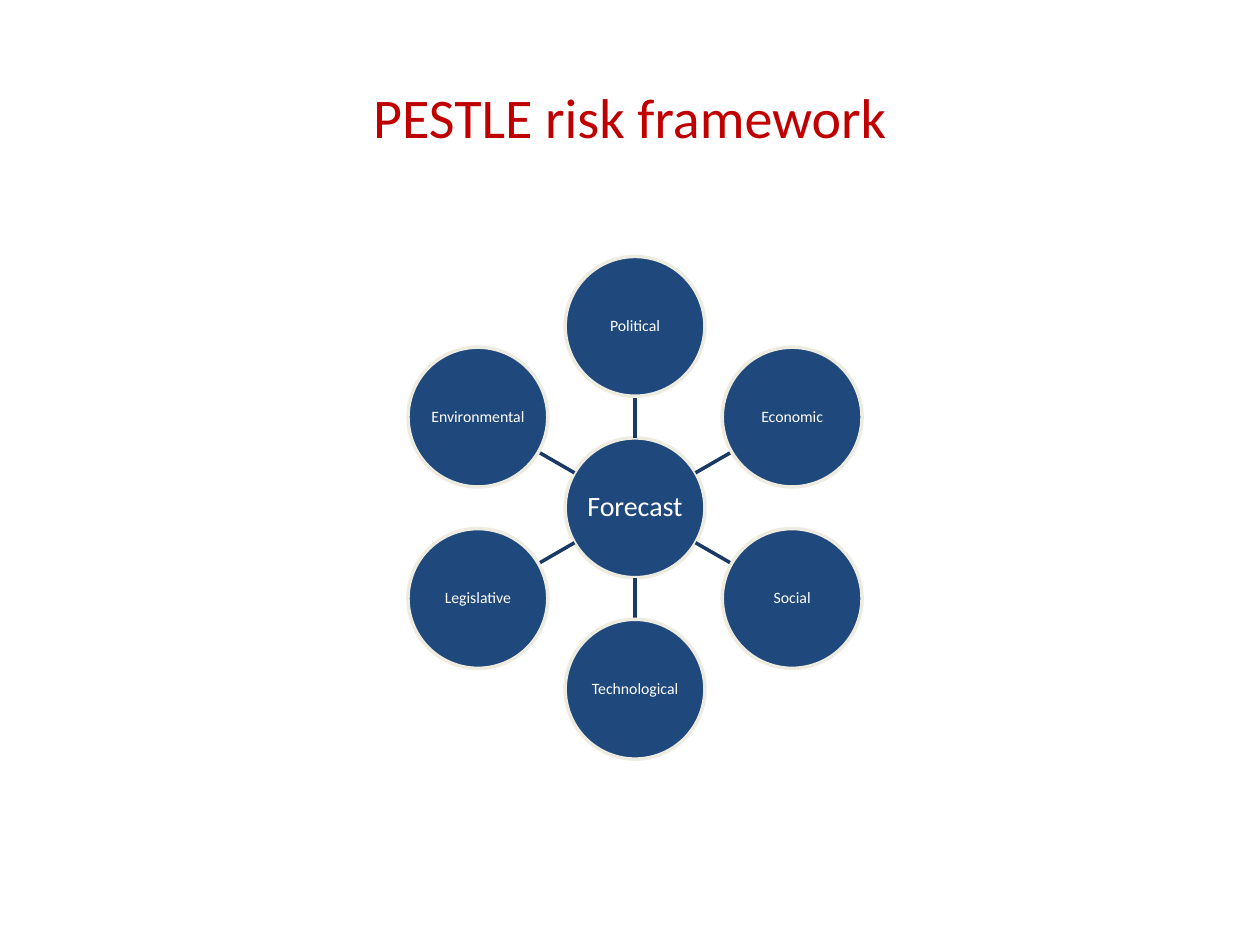
from math import cos, radians, sin

from lxml.etree import SubElement
from pptx import Presentation
from pptx.dml.color import RGBColor
from pptx.enum.shapes import MSO_CONNECTOR as Connector, MSO_SHAPE as Shape
from pptx.enum.text import MSO_ANCHOR as Anchor, PP_ALIGN as Align
from pptx.oxml.ns import qn
from pptx.util import Inches, Pt

NAVY = RGBColor(0x1F, 0x49, 0x7D)
DARK_NAVY = RGBColor(0x19, 0x3A, 0x64)
CREAM = RGBColor(0xEE, 0xEC, 0xE1)
RED = RGBColor(0xC0, 0x00, 0x00)
WHITE = RGBColor(0xFF, 0xFF, 0xFF)

CENTER_X, CENTER_Y = 5.04, 4.03
DIAMETER = 1.11
ORBIT = 1.44
FACTORS = ["Political", "Economic", "Social", "Technological", "Legislative", "Environmental"]


def write_text(shape, text, size, color, wrap=True, inset=0.1, line_spacing=1.0):
    frame = shape.text_frame
    frame.word_wrap = wrap
    frame.vertical_anchor = Anchor.MIDDLE
    frame.margin_left = frame.margin_right = Inches(inset)
    frame.margin_top = frame.margin_bottom = Inches(min(inset, 0.05))
    paragraph = frame.paragraphs[0]
    paragraph.alignment = Align.CENTER
    paragraph.line_spacing = line_spacing
    run = paragraph.add_run()
    run.text = text
    run.font.name = "Calibri"
    run.font.size = Pt(size)
    run.font.color.rgb = color


def add_title(slide, text):
    box = slide.shapes.add_textbox(Inches(0.5), Inches(0.3), Inches(9), Inches(1.25))
    write_text(box, text, size=32, color=RED)


def point_at(angle, distance):
    """Return the point at a clockwise angle from the top of the hub's centre."""
    turn = radians(angle)
    return CENTER_X + distance * sin(turn), CENTER_Y - distance * cos(turn)


def add_circle(slide, text, x, y, size):
    circle = slide.shapes.add_shape(
        Shape.OVAL, Inches(x - DIAMETER / 2), Inches(y - DIAMETER / 2),
        Inches(DIAMETER), Inches(DIAMETER))
    circle.shadow.inherit = False
    circle.fill.solid()
    circle.fill.fore_color.rgb = NAVY
    circle.line.color.rgb = CREAM
    circle.line.width = Pt(2)
    write_text(circle, text, size=size, color=WHITE, wrap=False, inset=0.01, line_spacing=0.9)


def add_spoke(slide, angle):
    start = point_at(angle, DIAMETER / 2)
    end = point_at(angle, ORBIT - DIAMETER / 2)
    spoke = slide.shapes.add_connector(
        Connector.STRAIGHT, *(Inches(value) for value in start + end))
    spoke.line.color.rgb = DARK_NAVY
    spoke.line.width = Pt(2)
    SubElement(spoke._element.spPr, qn("a:effectLst"))


def main():
    presentation = Presentation()
    presentation.slide_width = Inches(10)
    presentation.slide_height = Inches(7.5)
    slide = presentation.slides.add_slide(presentation.slide_layouts[6])

    add_circle(slide, "Forecast", CENTER_X, CENTER_Y, size=16)
    for index, factor in enumerate(FACTORS):
        angle = index * 360 / len(FACTORS)
        add_spoke(slide, angle)
        add_circle(slide, factor, *point_at(angle, ORBIT), size=9)
    add_title(slide, "PESTLE risk framework")

    presentation.save("out.pptx")


if __name__ == "__main__":
    main()
